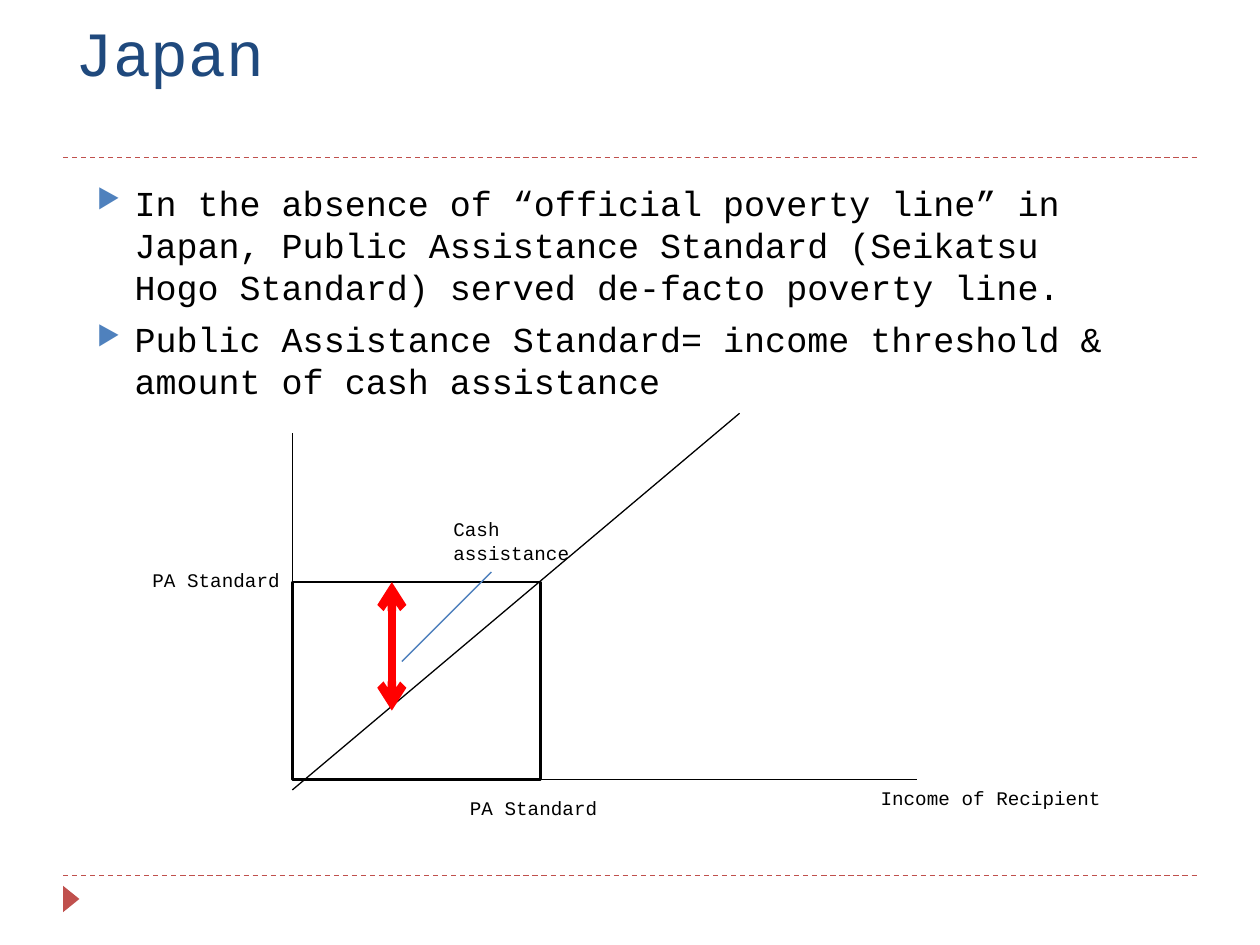
from dataclasses import dataclass

from lxml import etree
from pptx import Presentation
from pptx.dml.color import RGBColor
from pptx.enum.dml import MSO_LINE
from pptx.enum.shapes import MSO_CONNECTOR, MSO_SHAPE
from pptx.enum.text import MSO_ANCHOR, PP_ALIGN
from pptx.oxml.ns import qn
from pptx.util import Inches, Pt

WIDE, HIGH = 10, 7.5
FONT = "Courier New"
BLACK, RED, RUST, BLUE, NAVY = "000000", "FF0000", "C0504D", "4F81BD", "1F497D"
LEFT, RIGHT = PP_ALIGN.LEFT, PP_ALIGN.RIGHT
TOP, DASH = MSO_ANCHOR.TOP, MSO_LINE.DASH
STRAIGHT = MSO_CONNECTOR.STRAIGHT
RECT, TRIANGLE = MSO_SHAPE.RECTANGLE, MSO_SHAPE.ISOSCELES_TRIANGLE

# Chart frame: the income axes and the assistance standard
ORIGIN, BASE = 0.232 * WIDE, 0.825 * HIGH
LIMIT, LEVEL = 0.429 * WIDE, 0.616 * HIGH
GAP = 0.311 * WIDE
MARGIN = 0.05 * WIDE


@dataclass
class Line:
    x1: float
    y1: float
    x2: float
    y2: float
    color: str = BLACK
    width: float = 0.75
    dashed: bool = False
    arrows: bool = False


@dataclass
class Text:
    lines: list[str]
    x: float
    y: float
    w: float
    h: float
    size: float = 11
    color: str = BLACK
    align: PP_ALIGN = LEFT
    bullet: bool = False


RULES = [Line(MARGIN, y, WIDE - MARGIN, y, RUST, dashed=True)
         for y in (6.95, 1.25)]

GRAPH = [
    Line(ORIGIN, 6.27, 5.87, 3.28),
    Line(ORIGIN, 4.77, ORIGIN, 3.44),
    Line(4.21, BASE, 7.28, BASE),
    Line(GAP, LEVEL, GAP, 5.64, RED, 4.75, arrows=True),
    Line(3.9, 4.54, 3.19, 5.25, BLUE),
]

TEXTS = [
    Text(["Japan"], MARGIN, 0.06, 9, 1.08, 36, NAVY),
    Text(["In the absence of “official poverty line” in Japan, Public "
          "Assistance Standard (Seikatsu Hogo Standard) served de-facto "
          "poverty line.",
          "Public Assistance Standard= income threshold & amount of cash "
          "assistance"],
         0.67, 1.39, 8.43, 1.89, 20, bullet=True),
    Text(["Cash assistance"], 3.5, 4.06, 1.26, 0.47),
    Text(["PA Standard"], 1.06, 4.46, 1.26, 0.29, align=RIGHT),
    Text(["Income of Recipient"], 6.89, BASE, 2.2, 0.29),
    Text(["PA Standard"], 3.58, 6.27, 1.26, 0.29, align=RIGHT),
]


def paint(code: str) -> RGBColor:
    return RGBColor.from_string(code)


def draw_line(shapes, item: Line) -> None:
    ends = map(Inches, (item.x1, item.y1, item.x2, item.y2))
    link = shapes.add_connector(STRAIGHT, *ends)
    link.line.color.rgb = paint(item.color)
    link.line.width = Pt(item.width)
    if item.dashed:
        link.line.dash_style = DASH
    props = link._element.spPr
    if item.arrows:
        for tag in ("a:headEnd", "a:tailEnd"):
            etree.SubElement(props.find(qn("a:ln")), qn(tag), type="arrow")
    etree.SubElement(props, qn("a:effectLst"))


def add_bullet(para) -> None:
    """Give a paragraph a hanging indent and a blue arrow bullet."""
    props = para._p.get_or_add_pPr()
    props.set("marL", str(Inches(0.3)))
    props.set("indent", str(-Inches(0.3)))
    color = etree.SubElement(props, qn("a:buClr"))
    etree.SubElement(color, qn("a:srgbClr"), val=BLUE)
    etree.SubElement(props, qn("a:buSzPct"), val="76000")
    etree.SubElement(props, qn("a:buChar"), char="▶")


def draw_text(shapes, item: Text) -> None:
    box = shapes.add_textbox(*map(Inches, (item.x, item.y, item.w, item.h)))
    frame = box.text_frame
    frame.word_wrap = True
    frame.vertical_anchor = TOP
    for i, line in enumerate(item.lines):
        para = frame.add_paragraph() if i else frame.paragraphs[0]
        para.alignment = item.align
        if item.bullet:
            para.space_before = Pt(6)
            add_bullet(para)
        run = para.add_run()
        run.text = line
        run.font.name = FONT
        run.font.size = Pt(item.size)
        run.font.color.rgb = paint(item.color)


def draw_mark(shapes) -> None:
    mark = shapes.add_shape(TRIANGLE, *map(Inches, (0.46, 7.07, 0.21, 0.13)))
    mark.rotation = 90
    mark.shadow.inherit = False
    mark.fill.solid()
    mark.fill.fore_color.rgb = paint(RUST)
    mark.line.fill.background()


def draw_frame(shapes) -> None:
    """Outline the incomes that fall below the assistance standard."""
    area = (ORIGIN, LEVEL, LIMIT - ORIGIN, BASE - LEVEL)
    frame = shapes.add_shape(RECT, *map(Inches, area))
    frame.shadow.inherit = False
    frame.fill.background()
    frame.line.color.rgb = paint(BLACK)
    frame.line.width = Pt(1.5)


def main() -> None:
    deck = Presentation()
    deck.slide_width, deck.slide_height = Inches(WIDE), Inches(HIGH)
    shapes = deck.slides.add_slide(deck.slide_layouts[6]).shapes
    for rule in RULES:
        draw_line(shapes, rule)
    draw_mark(shapes)
    draw_frame(shapes)
    for line in GRAPH:
        draw_line(shapes, line)
    for text in TEXTS:
        draw_text(shapes, text)
    deck.save("out.pptx")


if __name__ == "__main__":
    main()
